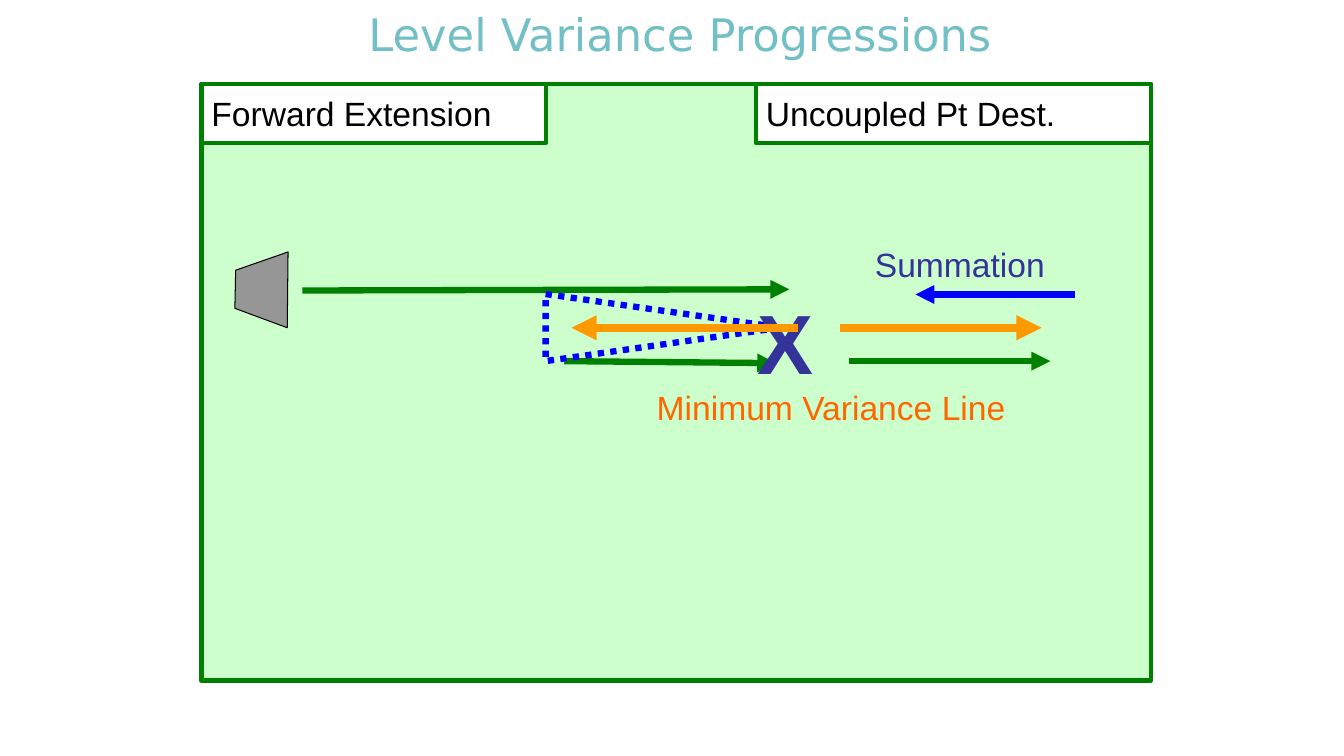
from dataclasses import dataclass

from pptx import Presentation
from pptx.dml.color import RGBColor
from pptx.enum.dml import MSO_LINE
from pptx.enum.shapes import MSO_CONNECTOR, MSO_SHAPE
from pptx.enum.text import MSO_ANCHOR, PP_ALIGN
from pptx.oxml.ns import qn
from pptx.util import Cm, Pt
from lxml.etree import SubElement

COLOURS = {
    "panel": "CCFFCC", "white": "FFFFFF", "black": "000000",
    "green": "008000", "blue": "0000FF", "orange": "FF9900",
    "grey": "969696", "title": "72BFC5", "indigo": "333399",
    "label orange": "FF6600",
}


@dataclass(frozen=True)
class Area:
    left: float
    top: float
    width: float
    height: float

    def lengths(self) -> tuple:
        return Cm(self.left), Cm(self.top), Cm(self.width), Cm(self.height)


@dataclass(frozen=True)
class Label:
    text: str
    area: Area
    colour: str
    size: int = 24
    bold: bool = False


@dataclass(frozen=True)
class Arrow:
    start: tuple
    end: tuple
    colour: str
    width: float = 4.5


PANEL = Area(5.08, 2.12, 23.92, 15.03)
TITLE = Area(6.35, 0, 21.59, 1.69)
FORWARD = Label("Forward Extension", Area(5.08, 2.12, 8.68, 1.48), "black")
UNCOUPLED = Label("Uncoupled Pt Dest.", Area(19.05, 2.12, 9.95, 1.48), "black")
CROSS = Label("X", Area(18.84, 6.99, 3.33, 1.57), "indigo", 60, True)
NOTES = [
    Label("Summation", Area(21.8, 5.93, 6.45, 0.97), "indigo"),
    Label("Minimum Variance Line", Area(16.3, 9.53, 12.27, 1.38), "label orange"),
]
ARROWS_BEHIND = [
    Arrow((14.22, 9.1), (19.56, 9.15), "green"),
    Arrow((21.39, 9.1), (26.47, 9.1), "green"),
    Arrow((27.1, 7.42), (23.07, 7.42), "blue"),
    Arrow((21.17, 8.26), (26.25, 8.26), "orange", 6),
    Arrow((7.62, 7.32), (19.89, 7.29), "green"),
]
ARROW_IN_FRONT = Arrow((20.11, 8.26), (14.4, 8.26), "orange", 6)
SPEAKER = [(7.24, 8.26), (5.92, 7.77), (5.94, 6.81), (7.26, 6.35)]
SUMMATION_TRIANGLE = Area(15.87, 5.29, 1.69, 5.93)


def colour_of(name: str) -> RGBColor:
    return RGBColor.from_string(COLOURS[name])


def write(shape, text: str, *, colour: str, size: int, font: str = "Arial",
          bold: bool = False, align=PP_ALIGN.LEFT, anchor=MSO_ANCHOR.TOP,
          margin_top: float = 0.13) -> None:
    frame = shape.text_frame
    frame.word_wrap = True
    frame.vertical_anchor = anchor
    frame.margin_top = Cm(margin_top)
    para = frame.paragraphs[0]
    para.alignment = align
    span = para.add_run()
    span.text = text
    span.font.name = font
    span.font.size = Pt(size)
    span.font.bold = bold
    span.font.color.rgb = colour_of(colour)


def write_label(shape, label: Label) -> None:
    # The first line sits a tenth of its size below the usual margin
    write(shape, label.text, colour=label.colour, size=label.size,
          bold=label.bold, margin_top=0.13 + Pt(label.size).cm / 10)


def paint(shape, fill: str | None, line: str, width: float) -> None:
    shape.shadow.inherit = False
    if fill is None:
        shape.fill.background()
    else:
        shape.fill.solid()
        shape.fill.fore_color.rgb = colour_of(fill)
    shape.line.color.rgb = colour_of(line)
    shape.line.width = Pt(width)


def add_rectangle(page, area: Area, fill: str):
    box = page.shapes.add_shape(MSO_SHAPE.RECTANGLE, *area.lengths())
    paint(box, fill, "green", 3)
    return box


def add_heading(page, label: Label) -> None:
    write_label(add_rectangle(page, label.area, "white"), label)


def add_label(page, label: Label) -> None:
    write_label(page.shapes.add_textbox(*label.area.lengths()), label)


def add_arrow(page, arrow: Arrow) -> None:
    ends = [Cm(value) for value in arrow.start + arrow.end]
    line = page.shapes.add_connector(MSO_CONNECTOR.STRAIGHT, *ends)
    line.line.color.rgb = colour_of(arrow.colour)
    line.line.width = Pt(arrow.width)
    SubElement(line.line._get_or_add_ln(), qn("a:tailEnd"), type="triangle")
    SubElement(line._element.spPr, qn("a:effectLst"))


def add_speaker(page) -> None:
    first, *others = [(Cm(x), Cm(y)) for x, y in SPEAKER]
    builder = page.shapes.build_freeform(*first)
    builder.add_line_segments(others, close=True)
    paint(builder.convert_to_shape(), "grey", "black", 0.75)


def add_summation_triangle(page) -> None:
    triangle = page.shapes.add_shape(
        MSO_SHAPE.ISOSCELES_TRIANGLE, *SUMMATION_TRIANGLE.lengths())
    triangle.rotation = 90
    paint(triangle, None, "blue", 4.5)
    triangle.line.dash_style = MSO_LINE.ROUND_DOT


def main() -> None:
    deck = Presentation()
    deck.slide_width, deck.slide_height = Cm(33.87), Cm(19.05)
    page = deck.slides.add_slide(deck.slide_layouts[5])

    # Title
    title = page.shapes.title
    title.left, title.top, title.width, title.height = TITLE.lengths()
    write(title, "Level Variance Progressions", colour="title", size=32,
          font="DejaVu Sans", align=PP_ALIGN.CENTER, anchor=MSO_ANCHOR.MIDDLE)

    # Panel and its notes
    add_rectangle(page, PANEL, "panel")
    add_heading(page, UNCOUPLED)
    for note in NOTES:
        add_label(page, note)

    # Speaker and progression arrows
    for arrow in ARROWS_BEHIND:
        add_arrow(page, arrow)
    add_speaker(page)

    # Summation triangle, crossing point and returning line
    add_summation_triangle(page)
    add_label(page, CROSS)
    add_heading(page, FORWARD)
    add_arrow(page, ARROW_IN_FRONT)

    deck.save("out.pptx")


if __name__ == "__main__":
    main()
